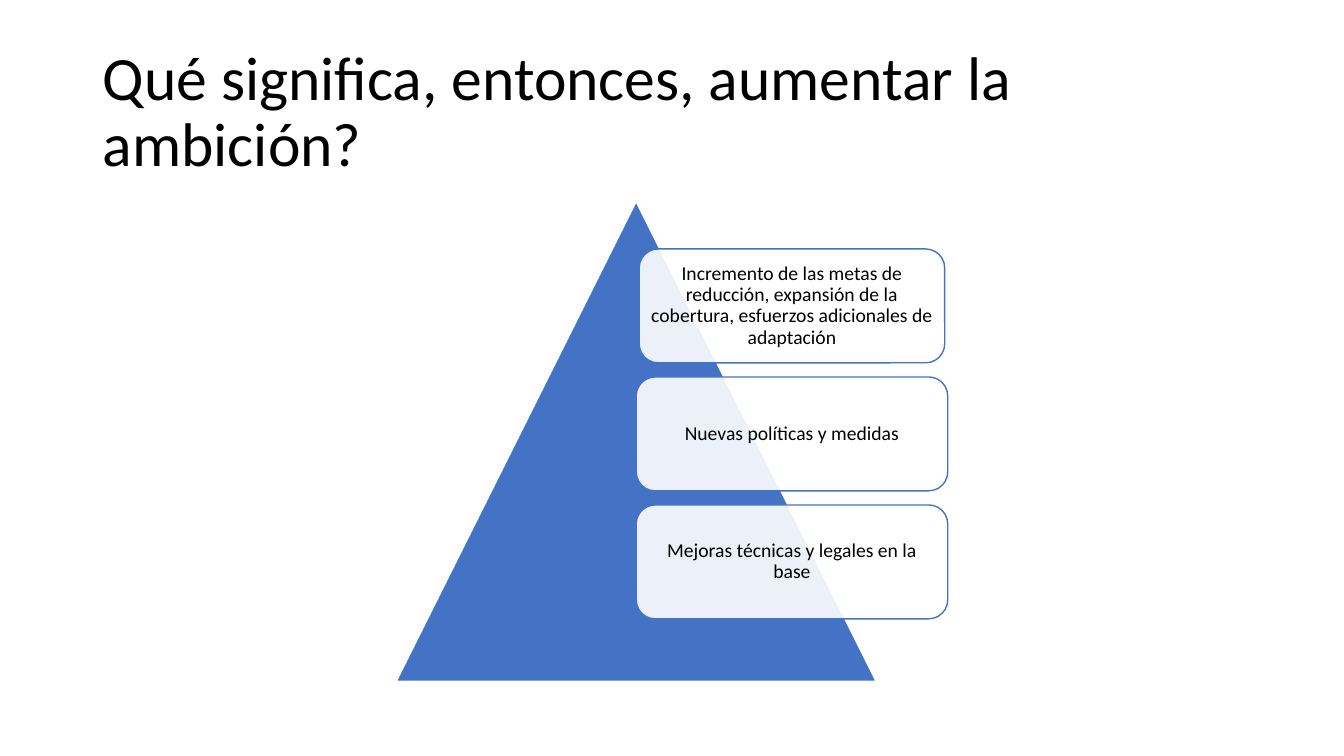
from dataclasses import dataclass

from lxml import etree
from pptx import Presentation
from pptx.dml.color import RGBColor
from pptx.enum.shapes import MSO_SHAPE as SHAPE
from pptx.enum.text import MSO_ANCHOR as ANCHOR, MSO_AUTO_SIZE as AUTO, PP_ALIGN as ALIGN
from pptx.oxml.ns import qn
from pptx.util import Pt

PX = 9144  # 100 px to the inch


@dataclass(frozen=True)
class Theme:
    font: str = "Calibri"
    blue: RGBColor = RGBColor(0x44, 0x72, 0xC4)
    white: RGBColor = RGBColor(0xFF, 0xFF, 0xFF)
    black: RGBColor = RGBColor(0, 0, 0)
    title: int = 44
    body: int = 14


theme = Theme()


def write(sp, text, *, size, align, inset=None):
    tf = sp.text_frame
    tf.word_wrap = True
    tf.auto_size = AUTO.NONE
    tf.vertical_anchor = ANCHOR.MIDDLE
    if inset is not None:
        tf.margin_left = tf.margin_right = tf.margin_top = tf.margin_bottom = inset * PX
    p = tf.paragraphs[0]
    p.alignment = align
    p.line_spacing = 0.9
    r = p.add_run()
    r.text = text
    r.font.name = theme.font
    r.font.size = Pt(size)
    r.font.color.rgb = theme.black


def add_box(shapes, kind, x, y, w, h, *, fill, line):
    sp = shapes.add_shape(kind, x * PX, y * PX, w * PX, h * PX)
    sp.shadow.inherit = False
    sp.fill.solid()
    sp.fill.fore_color.rgb = fill
    sp.line.color.rgb = line
    sp.line.width = Pt(1)
    return sp


prs = Presentation()
prs.slide_width, prs.slide_height = 1333 * PX, 750 * PX
s = prs.slides.add_slide(prs.slide_layouts[5])

title = s.shapes.title
title.left, title.top, title.width, title.height = 92 * PX, 40 * PX, 1150 * PX, 145 * PX
write(title, "Qué significa, entonces, aumentar la ambición?", size=theme.title, align=ALIGN.LEFT)

pyramid = s.shapes.add_group_shape()
add_box(pyramid.shapes, SHAPE.ISOSCELES_TRIANGLE, 393, 200, 476, 476,
        fill=theme.blue, line=theme.white)

levels = [
    (634, 303, "Incremento de las metas de reducción, expansión de la cobertura, "
               "esfuerzos adicionales de adaptación"),
    (631, 309, "Nuevas políticas y medidas"),
    (631, 309, "Mejoras técnicas y legales en la base"),
]
for i, (x, w, text) in enumerate(levels):
    sp = add_box(pyramid.shapes, SHAPE.ROUNDED_RECTANGLE, x, 247 + 127 * i, w, 113,
                 fill=theme.white, line=theme.blue)
    color = sp.fill._xPr.find(qn("a:solidFill"))[0]
    etree.SubElement(color, qn("a:alpha"), val="90000")
    write(sp, text, size=theme.body, align=ALIGN.CENTER, inset=6)

prs.save("out.pptx")
